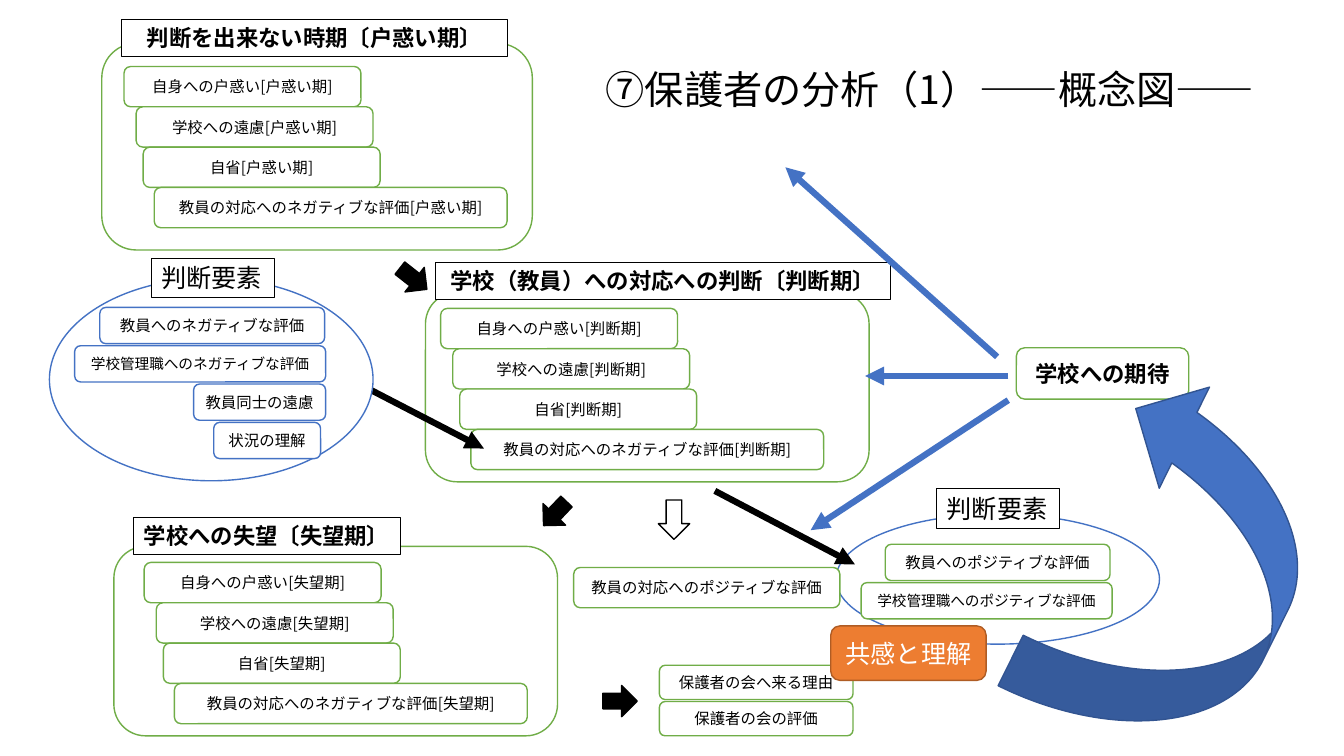
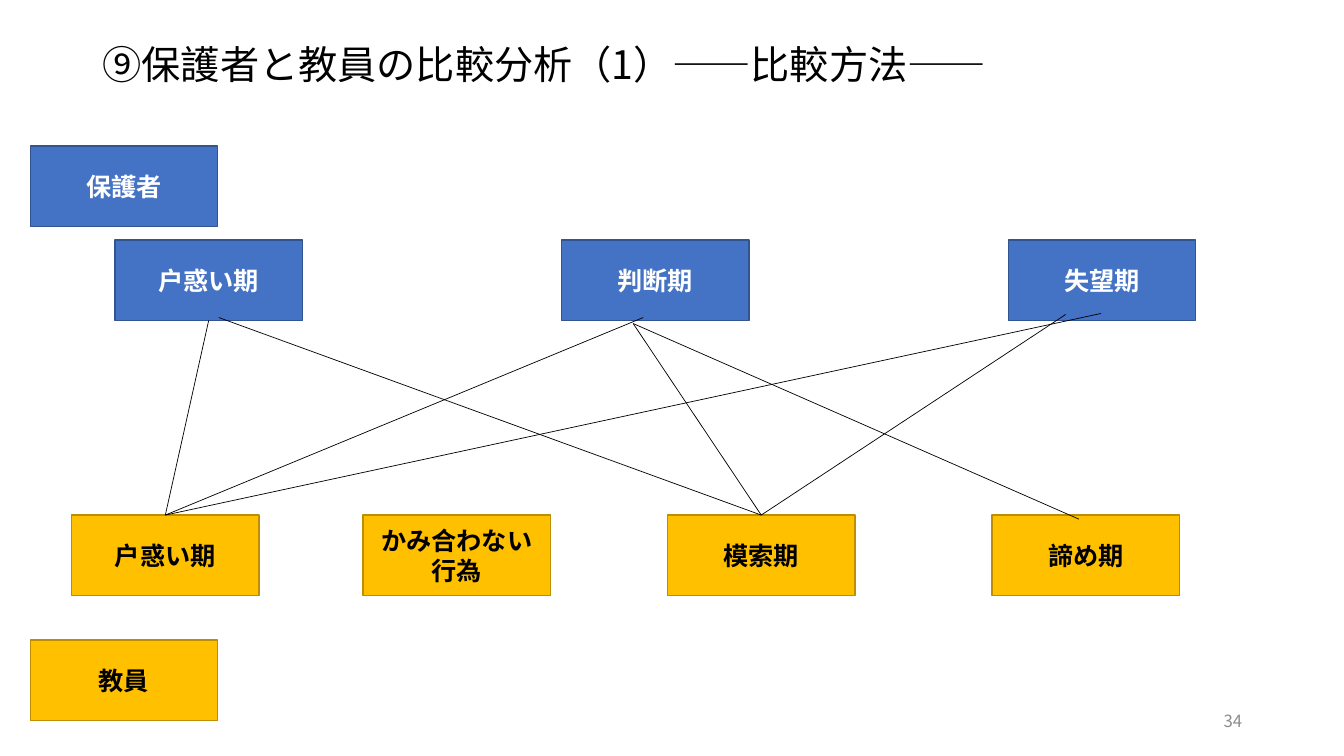
from dataclasses import dataclass
from typing import NamedTuple, Optional

from lxml import etree
from pptx import Presentation
from pptx.dml.color import RGBColor
from pptx.enum import shapes, text
from pptx.oxml.ns import qn
from pptx.util import Inches, Pt

Shape = shapes.MSO_SHAPE
Align = text.PP_ALIGN
Anchor = text.MSO_ANCHOR


@dataclass(frozen=True)
class Theme:
    font: str = "Noto Sans CJK JP"
    black: str = "000000"
    white: str = "FFFFFF"
    grey: str = "8C8C8C"
    green: str = "70AD47"
    blue: str = "4472C4"
    blue_edge: str = "325491"
    orange: str = "ED7D31"
    orange_edge: str = "AF5C24"
    gold: str = "FFC000"
    gold_edge: str = "BD8E00"
    title: float = 28
    label: float = 18
    heading: float = 16
    number: float = 12
    body: float = 11
    small: float = 10.5


THEME = Theme()


class Area(NamedTuple):
    left: float
    top: float
    width: float
    height: float

    def lengths(self):
        return [Inches(value) for value in self]


class Point(NamedTuple):
    x: float
    y: float


class Style(NamedTuple):
    fill: Optional[str]
    edge: str
    weight: float = 1


class Type(NamedTuple):
    size: float
    color: str = THEME.black
    bold: bool = False
    align: Align = Align.CENTER


class Pill(NamedTuple):
    words: str
    left: float
    width: float
    size: float = THEME.body


class Phase(NamedTuple):
    name: str
    heading: str
    panel: Area
    label: Area
    first_pill: Point


class Arrow(NamedTuple):
    start: Point
    end: Point
    color: str


class Block(NamedTuple):
    area: Area
    angle: float
    fill: Optional[str] = THEME.black


GREEN_OUTLINE = Style(THEME.white, THEME.green)
BLUE_OUTLINE = Style(THEME.white, THEME.blue)
LABEL_FRAME = Style(THEME.white, THEME.black, 0.75)
PARENT = Style(THEME.blue, THEME.blue_edge)
TEACHER = Style(THEME.gold, THEME.gold_edge)

PHASES = [
    Phase("失望期", "学校への失望〔失望期〕", Area(1.13, 5.42, 4.4, 1.88),
          Area(1.32, 5.13, 2.65, 0.37), Point(1.43, 5.58)),
    Phase("戸惑い期", "判断を出来ない時期〔戸惑い期〕", Area(1.01, 0.43, 4.27, 2.05),
          Area(1.21, 0.19, 3.82, 0.37), Point(1.23, 0.66)),
    Phase("判断期", "学校（教員）への対応への判断〔判断期〕", Area(4.22, 2.9, 4.4, 1.88),
          Area(4.32, 2.6, 4.51, 0.37), Point(4.37, 3.06)),
]
# Left values are offsets from the first pill of a phase.
PHASE_PILLS = [
    Pill("自身への戸惑い", 0, 2.35),
    Pill("学校への遠慮", 0.12, 2.35),
    Pill("自省", 0.19, 2.35),
    Pill("教員の対応へのネガティブな評価", 0.3, 3.5),
]
MEETING_PILLS = [
    Pill("保護者の会へ来る理由", 6.54, 1.92),
    Pill("保護者の会の評価", 6.54, 1.92),
]
NEGATIVE_PILLS = [
    Pill("教員へのネガティブな評価", 0.99, 2.23),
    Pill("学校管理職へのネガティブな評価", 0.74, 2.49, THEME.small),
    Pill("教員同士の遠慮", 1.92, 1.31),
    Pill("状況の理解", 2.12, 1.06),
]
POSITIVE_PILLS = [
    Pill("教員へのポジティブな評価", 8.78, 2.23),
    Pill("学校管理職へのポジティブな評価", 8.54, 2.49, THEME.small),
]
FLOW_BLOCKS = [
    Block(Area(5.98, 6.8, 0.34, 0.31), 180),
    Block(Area(3.93, 2.61, 0.34, 0.31), 218.1),
    Block(Area(5.34, 4.94, 0.33, 0.31), 313.6),
    Block(Area(6.49, 5, 0.39, 0.31), 270, None),
]
FLOW_ARROWS = [
    Arrow(Point(10, 3.73), Point(8.58, 3.73), THEME.blue),
    Arrow(Point(9.89, 3.54), Point(7.79, 1.66), THEME.blue),
    Arrow(Point(10, 3.97), Point(8.04, 5.26), THEME.blue),
    Arrow(Point(3.41, 3.73), Point(4.8, 4.45), THEME.black),
]
POSITIVE_ARROW = Arrow(Point(7.09, 4.87), Point(8.48, 5.6), THEME.black)

PERIOD_SIZE = (1.86, 0.8)
PARENT_PERIODS = ["戸惑い期", "判断期", "失望期"]
TEACHER_PERIODS = {"戸惑い期": 0.71, "かみ合わない行為": 3.6, "模索期": 6.62, "諦め期": 9.84}
CONFUSED = Point(1.64, 5.11)
SEARCHING = Point(7.55, 5.11)
RESIGNED = Point(10.7, 5.15)
COMPARISONS = [
    (Point(2.07, 3.18), CONFUSED), (Point(2.17, 3.15), SEARCHING),
    (Point(6.38, 3.15), CONFUSED), (Point(6.28, 3.21), SEARCHING),
    (Point(10.92, 3.11), CONFUSED), (Point(6.28, 3.21), RESIGNED),
    (Point(10.57, 3.12), SEARCHING),
]


def write(shape, words: str, kind: Type, anchor=Anchor.MIDDLE) -> None:
    frame = shape.text_frame
    frame.text = words
    frame.word_wrap = True
    frame.vertical_anchor = anchor
    para = frame.paragraphs[0]
    para.alignment = kind.align
    span = para.runs[0]
    span.font.size = Pt(kind.size)
    span.font.bold = kind.bold
    span.font.color.rgb = RGBColor.from_string(kind.color)
    span.font.name = THEME.font
    east_asian = etree.SubElement(span.font._element, qn("a:ea"))
    east_asian.set("typeface", THEME.font)


def add_box(page, preset: Shape, area: Area, style: Style,
            words: str = "", kind: Type = Type(THEME.body)):
    box = page.shapes.add_shape(preset, *area.lengths())
    box.shadow.inherit = False
    if style.fill:
        box.fill.solid()
        box.fill.fore_color.rgb = RGBColor.from_string(style.fill)
    else:
        box.fill.background()
    box.line.color.rgb = RGBColor.from_string(style.edge)
    box.line.width = Pt(style.weight)
    if words:
        write(box, words, kind)
    return box


def add_text(page, area: Area, words: str, kind: Type, anchor=Anchor.TOP):
    box = page.shapes.add_textbox(*area.lengths())
    write(box, words, kind, anchor)
    return box


def add_title(page, area: Area, words: str):
    return add_text(page, area, words, Type(THEME.title, align=Align.LEFT))


def add_line(page, start: Point, end: Point, color: str, weight: float, arrow: bool = False) -> None:
    ends = [Inches(value) for value in (*start, *end)]
    line = page.shapes.add_connector(shapes.MSO_CONNECTOR.STRAIGHT, *ends)
    line.line.color.rgb = RGBColor.from_string(color)
    line.line.width = Pt(weight)
    properties = line._element.spPr
    if arrow:
        head = etree.SubElement(properties.find(qn("a:ln")), qn("a:tailEnd"))
        head.set("type", "triangle")
    etree.SubElement(properties, qn("a:effectLst"))


def add_arrow(page, arrow: Arrow) -> None:
    add_line(page, arrow.start, arrow.end, arrow.color, 4.5, arrow=True)


def add_pills(page, pills: list[Pill], top: float, step: float, height: float, style: Style) -> None:
    """Stack pills downwards at an equal step."""
    for row, pill in enumerate(pills):
        area = Area(pill.left, top + row * step, pill.width, height)
        add_box(page, Shape.ROUNDED_RECTANGLE, area, style, pill.words, Type(pill.size))


def add_phase(page, phase: Phase) -> None:
    add_box(page, Shape.ROUNDED_RECTANGLE, phase.panel, GREEN_OUTLINE)
    pills = [Pill(f"{pill.words}[{phase.name}]", phase.first_pill.x + pill.left, pill.width)
             for pill in PHASE_PILLS]
    add_pills(page, pills, phase.first_pill.y, 0.4, 0.4, GREEN_OUTLINE)
    add_box(page, Shape.RECTANGLE, phase.label, LABEL_FRAME, phase.heading,
            Type(THEME.heading, bold=True))


def add_factors(page, oval: Area, label: Point, pills: list[Pill], top: float, style: Style) -> None:
    """Draw an oval of judgement factors with its label."""
    add_box(page, Shape.OVAL, oval, BLUE_OUTLINE)
    add_pills(page, pills, top, 0.38, 0.36, style)
    add_box(page, Shape.RECTANGLE, Area(*label, 1.22, 0.39), LABEL_FRAME, "判断要素",
            Type(THEME.label, align=Align.LEFT))


def build_concept_map(page) -> None:
    add_pills(page, MEETING_PILLS, 6.6, 0.36, 0.34, GREEN_OUTLINE)
    for phase in PHASES:
        add_phase(page, phase)
    for block in FLOW_BLOCKS:
        shape = add_box(page, Shape.LEFT_ARROW, block.area, Style(block.fill, THEME.black))
        shape.rotation = block.angle
    add_box(page, Shape.ROUNDED_RECTANGLE, Area(10.08, 3.45, 1.71, 0.51), GREEN_OUTLINE,
            "学校への期待", Type(THEME.heading, bold=True))
    for arrow in FLOW_ARROWS:
        add_arrow(page, arrow)
    add_factors(page, Area(0.49, 2.76, 3.21, 2.01), Point(1.5, 2.56),
                NEGATIVE_PILLS, 3.05, BLUE_OUTLINE)
    add_factors(page, Area(8.29, 5.1, 3.21, 1.29), Point(9.29, 4.85),
                POSITIVE_PILLS, 5.4, GREEN_OUTLINE)
    add_arrow(page, POSITIVE_ARROW)
    add_box(page, Shape.ROUNDED_RECTANGLE, Area(8.24, 6.21, 1.54, 0.54),
            Style(THEME.orange, THEME.orange_edge), "共感と理解", Type(THEME.label, THEME.white))
    loop = add_box(page, Shape.CURVED_RIGHT_ARROW, Area(10.59, 3.86, 2.24, 3.63), PARENT)
    loop.rotation = 206.4
    add_box(page, Shape.ROUNDED_RECTANGLE, Area(5.69, 5.63, 2.64, 0.4), GREEN_OUTLINE,
            "教員の対応へのポジティブな評価")
    add_title(page, Area(5.91, 0.6, 6.76, 0.57), "⑦保護者の分析（1）――概念図――")


def build_comparison(page) -> None:
    add_text(page, Area(9.42, 6.95, 3, 0.4), "34",
             Type(THEME.number, THEME.grey, align=Align.RIGHT), Anchor.MIDDLE)
    title = add_title(page, Area(0.92, 0.4, 11.5, 1.45), "⑨保護者と教員の比較分析（1）――比較方法――")
    title.text_frame.paragraphs[0].line_spacing = 0.9

    parents = [("保護者", Point(0.3, 1.45))]
    parents += [(name, Point(1.14 + 4.43 * column, 2.38))
                for column, name in enumerate(PARENT_PERIODS)]
    teachers = [(name, Point(left, 5.11)) for name, left in TEACHER_PERIODS.items()]
    teachers.append(("教員", Point(0.3, 6.35)))
    for group, style, color in ((parents, PARENT, THEME.white), (teachers, TEACHER, THEME.black)):
        for name, corner in group:
            add_box(page, Shape.RECTANGLE, Area(*corner, *PERIOD_SIZE), style, name,
                    Type(THEME.label, color, bold=True))
    for start, end in COMPARISONS:
        add_line(page, start, end, THEME.black, 0.5)


def main() -> None:
    deck = Presentation()
    deck.slide_width, deck.slide_height = Inches(13.33), Inches(7.5)
    for build in (build_concept_map, build_comparison):
        build(deck.slides.add_slide(deck.slide_layouts[6]))
    deck.save("out.pptx")


if __name__ == "__main__":
    main()
